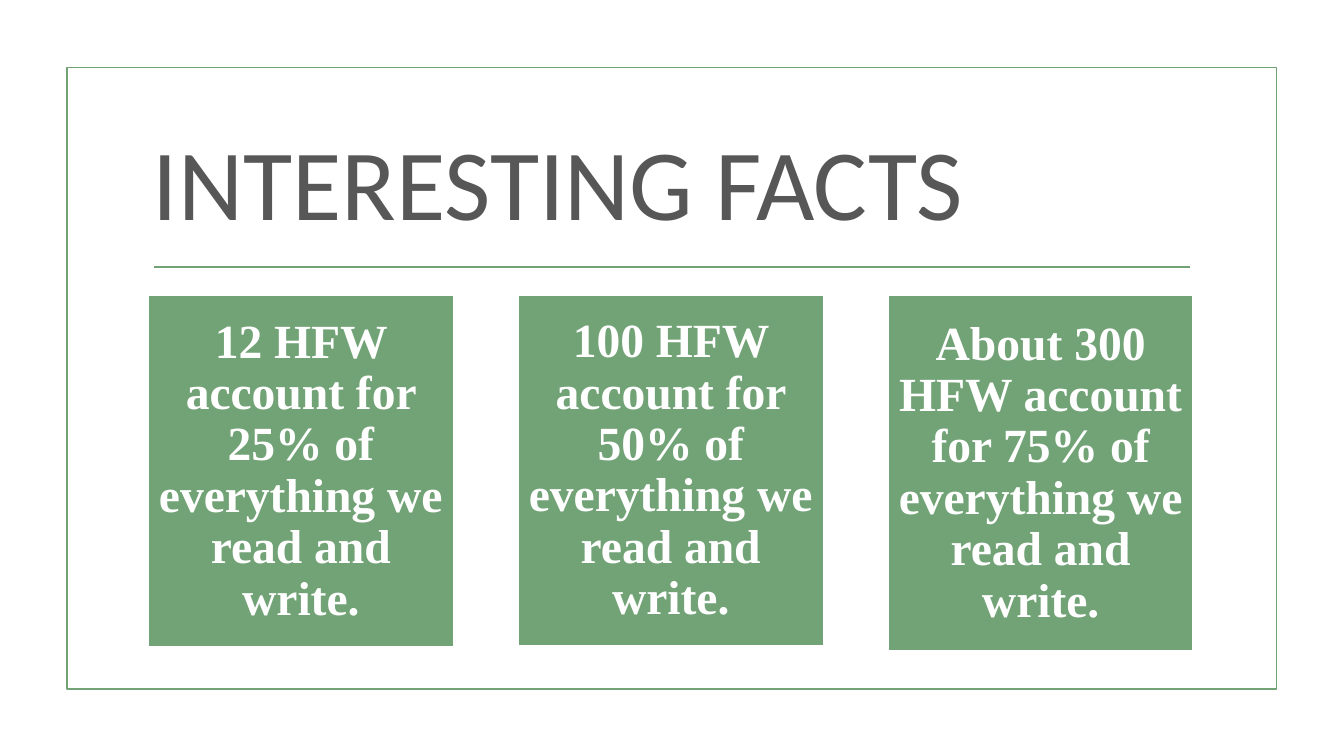
from typing import NamedTuple

from lxml.etree import SubElement
from pptx import Presentation
from pptx.dml.color import RGBColor
from pptx.enum.shapes import MSO_CONNECTOR as Connector, MSO_SHAPE as Shape
from pptx.enum.text import MSO_ANCHOR as Anchor, PP_ALIGN as Align
from pptx.oxml.ns import qn
from pptx.util import Pt

COLORS = {"green": "72A376", "white": "FFFFFF", "gray": "575757"}
LINE_WIDTH = 1.25
CARD_LEFT, CARD_TOP, CARD_WIDTH, CARD_STEP = 105.84, 210.96, 218.16, 264.24


class Fact(NamedTuple):
    """A statement and the height of its card."""
    text: str
    height: float


FACTS = [
    Fact("12 HFW account for 25% of everything we read and write.", 251.28),
    Fact("100 HFW account for 50% of everything we read and write.", 250.56),
    Fact("About 300 HFW account for 75% of everything we read and write.", 254.16),
]


def color(name: str) -> RGBColor:
    """Return a palette color."""
    return RGBColor.from_string(COLORS[name])


def add_box(slide, left: float, top: float, width: float, height: float,
            line: str, fill: str | None = None):
    """Draw an outlined rectangle, filled if a fill is named."""
    shape = slide.shapes.add_shape(
        Shape.RECTANGLE, Pt(left), Pt(top), Pt(width), Pt(height))
    shape.shadow.inherit = False
    if fill:
        shape.fill.solid()
        shape.fill.fore_color.rgb = color(fill)
    else:
        shape.fill.background()
    shape.line.color.rgb = color(line)
    shape.line.width = Pt(LINE_WIDTH)
    return shape


def write(shape, text: str, font_name: str, size: float, font_color: str,
          bold: bool = False):
    """Put one wrapped, vertically centered paragraph in a shape."""
    frame = shape.text_frame
    frame.word_wrap = True
    frame.vertical_anchor = Anchor.MIDDLE
    paragraph = frame.paragraphs[0]
    paragraph.text = text
    font = paragraph.font
    font.name, font.size, font.bold = font_name, Pt(size), bold
    font.color.rgb = color(font_color)
    return paragraph


def add_fact(slide, index: int, fact: Fact) -> None:
    """Draw a fact card in its column."""
    card = add_box(slide, CARD_LEFT + index * CARD_STEP, CARD_TOP,
                   CARD_WIDTH, fact.height, "white", "green")
    frame = card.text_frame
    frame.margin_left = frame.margin_right = Pt(1.5)
    frame.margin_top = frame.margin_bottom = Pt(1.5)
    paragraph = write(card, fact.text, "Times New Roman", 34, "white", True)
    paragraph.alignment = Align.CENTER
    paragraph.line_spacing = 0.9


def add_rule(slide, left: float, right: float, top: float) -> None:
    """Draw the horizontal line below the title."""
    rule = slide.shapes.add_connector(
        Connector.STRAIGHT, Pt(left), Pt(top), Pt(right), Pt(top))
    rule.line.color.rgb = color("green")
    rule.line.width = Pt(LINE_WIDTH)
    SubElement(rule.element.spPr, qn("a:effectLst"))


def main() -> None:
    """Build and save the slide."""
    presentation = Presentation()
    presentation.slide_width, presentation.slide_height = Pt(960), Pt(540)
    slide = presentation.slides.add_slide(presentation.slide_layouts[6])
    add_box(slide, 47.8, 48.2, 864, 444, "green")
    add_rule(slide, 110.2, 850.3, 190.8)
    for index, fact in enumerate(FACTS):
        add_fact(slide, index, fact)
    title = slide.shapes.add_textbox(Pt(102.2), Pt(77), Pt(756), Pt(103))
    write(title, "INTERESTING FACTS", "Calibri", 72, "gray")
    presentation.save("out.pptx")


if __name__ == "__main__":
    main()
